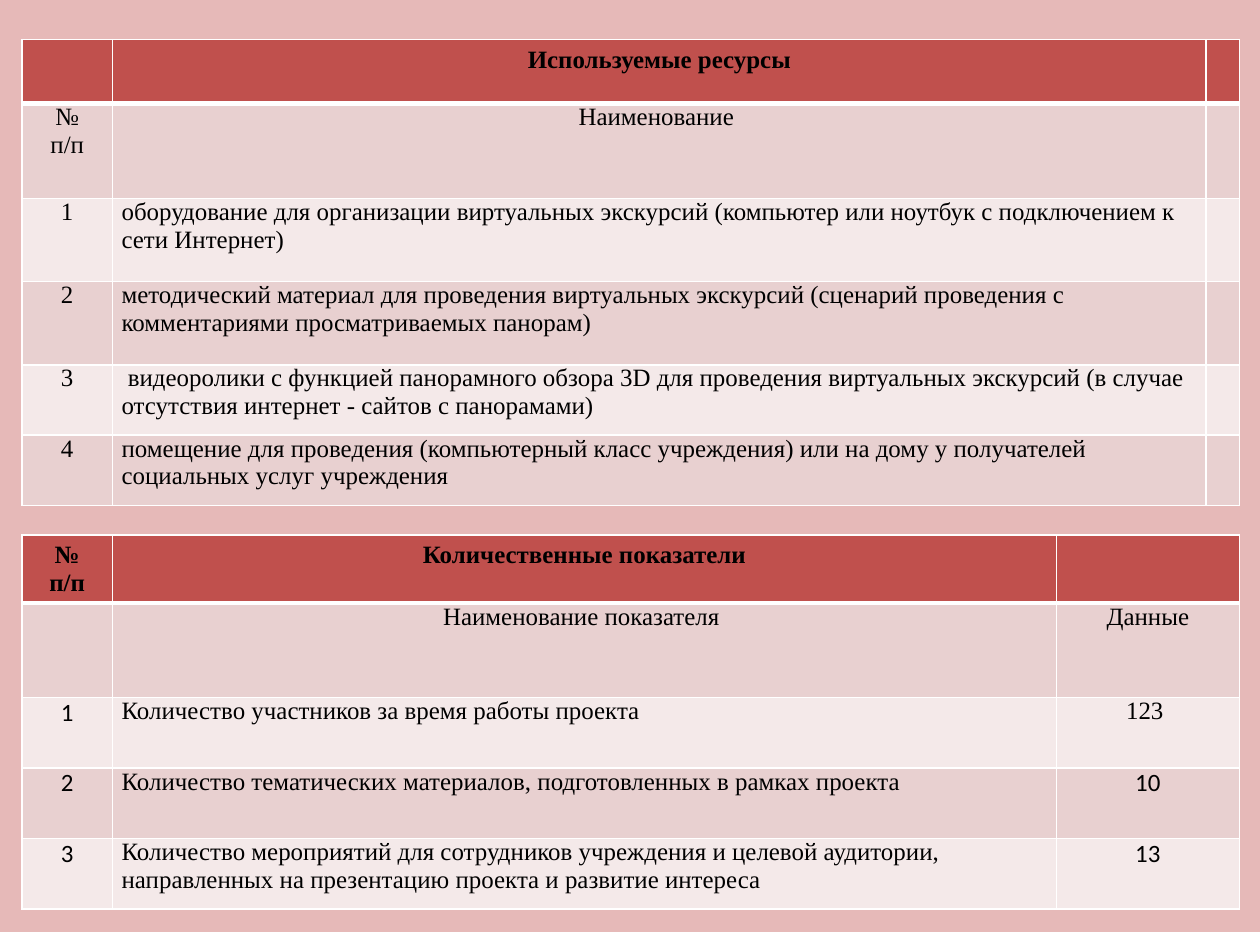
from lxml.etree import SubElement
from pptx import Presentation
from pptx.dml.color import RGBColor
from pptx.enum.text import PP_ALIGN
from pptx.oxml.ns import qn
from pptx.util import Inches, Pt

WIDE, HIGH = 9.84, 7.28
PINK = RGBColor(0xE6, 0xB9, 0xB8)
RED = RGBColor(0xC0, 0x50, 0x4D)
ROSE = RGBColor(0xE8, 0xD0, 0xD0)
PALE = RGBColor(0xF4, 0xE9, 0xE9)
WHITE = RGBColor(0xFF, 0xFF, 0xFF)
BLACK = RGBColor(0, 0, 0)
SERIF, SANS = "Times New Roman", "Calibri"

TOOLS = [
    ("", "Используемые ресурсы", ""),
    ("№\nп/п", "Наименование ", ""),
    ("1", "оборудование для организации виртуальных экскурсий (компьютер или ноутбук "
          "с подключением к сети Интернет)", ""),
    ("2", "методический материал для проведения виртуальных экскурсий (сценарий "
          "проведения с комментариями просматриваемых панорам)", ""),
    ("3", " видеоролики с функцией панорамного обзора 3D для проведения виртуальных "
          "экскурсий (в случае отсутствия интернет - сайтов с панорамами)", ""),
    ("4", "помещение для проведения (компьютерный класс учреждения) или на дому "
          "у получателей социальных услуг учреждения", ""),
]
COUNTS = [
    ("№ п/п", "Количественные показатели", ""),
    ("", "Наименование показателя ", "Данные"),
    ("1", "Количество участников за время работы проекта", "123 "),
    ("2", "Количество тематических материалов, подготовленных в рамках проекта", "10"),
    ("3", "Количество мероприятий для сотрудников учреждения и целевой аудитории, "
          "направленных на презентацию проекта и развитие интереса", "13"),
]


def add_edge(cell, side, size):
    line = SubElement(cell._tc.get_or_add_tcPr(), qn("a:ln" + side), w=str(Pt(size)))
    fill = SubElement(line, qn("a:solidFill"))
    SubElement(fill, qn("a:srgbClr"), val=str(WHITE))


def add_text(cell, text, font, bold, align):
    frame = cell.text_frame
    for index, part in enumerate(text.split("\n")):
        para = frame.add_paragraph() if index else frame.paragraphs[0]
        para.alignment = align
        run = para.add_run()
        run.text = part
        run.font.size = Pt(14)
        run.font.name = font
        run.font.bold = bold
        run.font.color.rgb = BLACK


def fill_cell(cell, text, row, col, digit):
    head = row == 0
    for side in "LRTB":
        thick = (head and side == "B") or (row == 1 and side == "T")
        add_edge(cell, side, 3 if thick else 1)
    cell.fill.solid()
    cell.fill.fore_color.rgb = RED if head else ROSE if row % 2 else PALE
    if not text:
        return
    cell.margin_left = cell.margin_right = Inches(0.1 if head else 0.07)
    cell.margin_top = cell.margin_bottom = Inches(0.05 if head else 0)
    align = PP_ALIGN.LEFT if col == 1 and row > 1 else PP_ALIGN.CENTER
    add_text(cell, text, digit if text.isdigit() else SERIF, head, align)


def add_grid(slide, box, cols, rows, data, digit):
    left, top, width, height = box
    frame = slide.shapes.add_table(len(rows), len(cols), Inches(left), Inches(top),
                                   Inches(width), Inches(height))
    table = frame.table
    for column, share in zip(table.columns, cols):
        column.width = Inches(width * share / sum(cols))
    for line, share in zip(table.rows, rows):
        line.height = Inches(height * share / sum(rows))
    for row, texts in enumerate(data):
        for col, text in enumerate(texts):
            fill_cell(table.cell(row, col), text, row, col, digit)


def main():
    deck = Presentation()
    deck.slide_width, deck.slide_height = Inches(WIDE), Inches(HIGH)
    slide = deck.slides.add_slide(deck.slide_layouts[6])
    slide.background.fill.solid()
    slide.background.fill.fore_color.rgb = PINK
    left = 0.17
    width = WIDE - 2 * left + 0.01
    add_grid(slide, (left, 0.31, width, 3.64), (0.71, 8.54, 0.26),
             (0.5, 0.74, 0.65, 0.65, 0.55, 0.55), TOOLS, SERIF)
    add_grid(slide, (left, 4.18, width, 2.92), (0.71, 7.37, 1.43),
             (0.53, 0.74, 0.55, 0.55, 0.55), COUNTS, SANS)
    deck.save("out.pptx")


if __name__ == "__main__":
    main()
